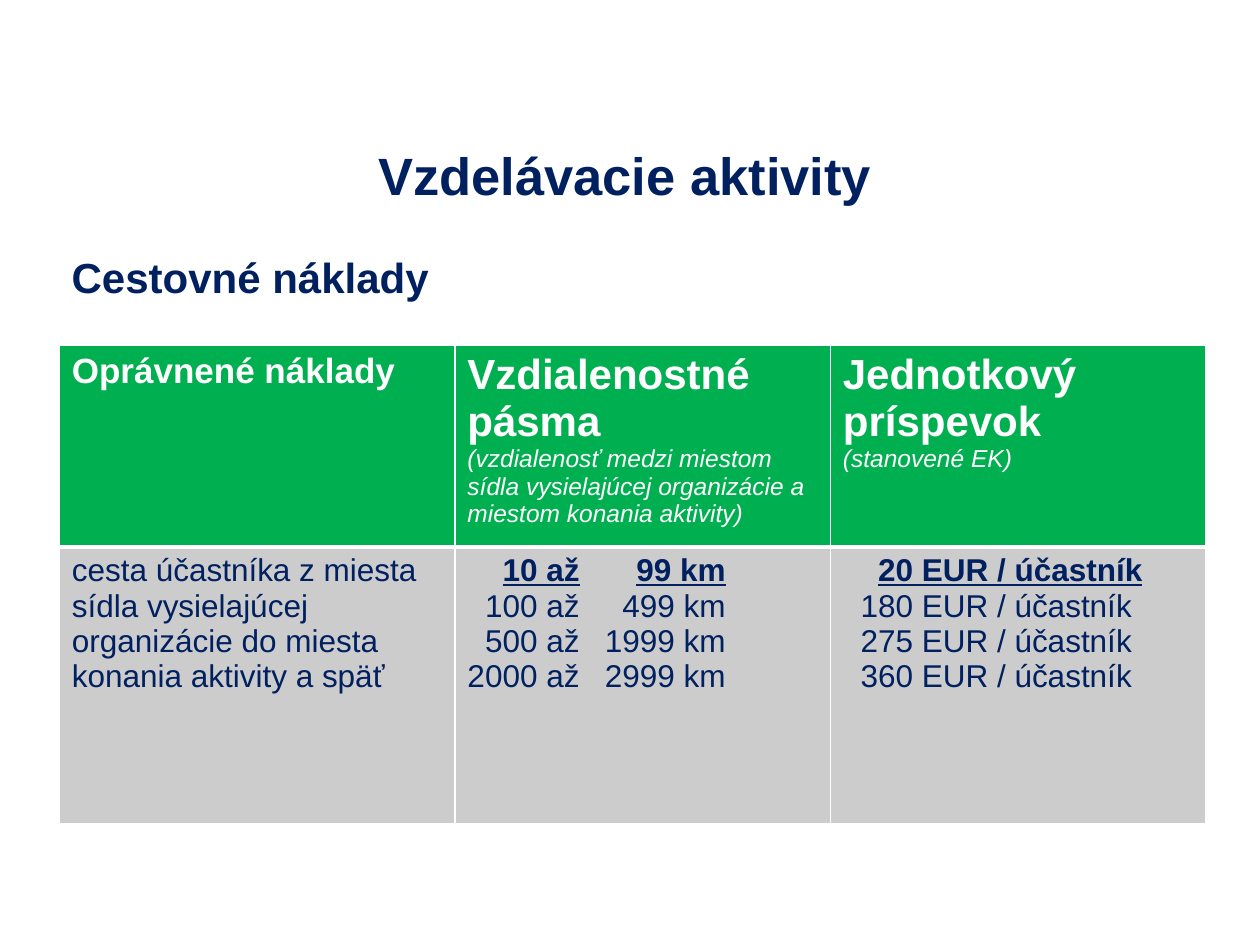
"""Builds the slide on travel costs for learning activities."""
from lxml.etree import SubElement
from pptx import Presentation
from pptx.dml.color import RGBColor
from pptx.enum.text import MSO_ANCHOR as Anchor, PP_ALIGN as Align
from pptx.oxml.ns import qn
from pptx.util import Inches, Pt

NAVY = RGBColor(0x00, 0x20, 0x60)
GREEN = RGBColor(0x00, 0xB0, 0x50)
GREY = RGBColor(0xCC, 0xCC, 0xCC)
WHITE = RGBColor(0xFF, 0xFF, 0xFF)
UNIT = Inches(0.1)
COLUMNS, ROWS = 100, 75
LEFT = 4.7
TAB_STOPS = (0.89, 2.05)

HEADING = {"size": Pt(24), "bold": True, "color": WHITE}
SMALL_HEADING = {**HEADING, "size": Pt(20)}
REMARK = {"size": Pt(14), "bold": False, "italic": True, "color": WHITE}
BODY = {"size": Pt(18), "bold": False, "color": NAVY}
MARKED = {**BODY, "bold": True, "underline": True}


def add_text(para, text, style):
    span = para.add_run()
    span.text = text
    span.font.name = "Arial"
    for name, value in style.items():
        if name == "color":
            span.font.color.rgb = value
        else:
            setattr(span.font, name, value)


def add_borders(cell, bottom):
    for side, width in (("L", 1), ("R", 1), ("T", 1), ("B", bottom)):
        line = SubElement(cell._tc.get_or_add_tcPr(), qn(f"a:ln{side}"), w=str(Pt(width)))
        SubElement(SubElement(line, qn("a:solidFill")), qn("a:srgbClr"), val=str(WHITE))


deck = Presentation()
deck.slide_width, deck.slide_height = COLUMNS * UNIT, ROWS * UNIT
page = deck.slides.add_slide(deck.slide_layouts[6])

titles = [
    ("Vzdelávacie aktivity", (7.1, 11.1, 85, 5.5), 30, Align.CENTER, Anchor.MIDDLE),
    ("Cestovné náklady", (LEFT, 19.5, 93.2, 5), 24, Align.JUSTIFY, Anchor.TOP),
]
for text, place, size, align, anchor in titles:
    box = page.shapes.add_textbox(*(int(length * UNIT) for length in place))
    frame = box.text_frame
    frame.word_wrap, frame.vertical_anchor = True, anchor
    frame.paragraphs[0].alignment = align
    add_text(frame.paragraphs[0], text, {"size": Pt(size), "bold": True, "color": NAVY})

distances = [("10", "99"), ("100", "499"), ("500", "1999"), ("2000", "2999")]
grants = [20, 180, 275, 360]
cells = [
    [
        [("Oprávnené náklady", SMALL_HEADING)],
        [("Vzdialenostné pásma", HEADING),
         ("(vzdialenosť medzi miestom sídla vysielajúcej organizácie a miestom konania aktivity)", REMARK)],
        [("Jednotkový príspevok", HEADING), ("(stanovené EK)", REMARK)],
    ],
    [
        [("cesta účastníka z miesta sídla vysielajúcej organizácie do miesta konania aktivity a späť", BODY)],
        [(f"\t{start} až\t{end} km", BODY if row else MARKED)
         for row, (start, end) in enumerate(distances)],
        [(f"{grant} EUR / účastník", BODY if row else MARKED)
         for row, grant in enumerate(grants)],
    ],
]
widths, heights = (31.4, 29.8, 29.8), (15.9, 22)
place = (LEFT, 27.4, sum(widths), sum(heights))
table = page.shapes.add_table(2, 3, *(int(length * UNIT) for length in place)).table
table.horz_banding = False
for column, width in zip(table.columns, widths):
    column.width = int(width * UNIT)
for row, height in zip(table.rows, heights):
    row.height = int(height * UNIT)

for row, (contents, fill, bottom) in enumerate(zip(cells, (GREEN, GREY), (3, 1))):
    for column, lines in enumerate(contents):
        cell = table.cell(row, column)
        add_borders(cell, bottom)
        cell.fill.solid()
        cell.fill.fore_color.rgb = fill
        for number, (text, style) in enumerate(lines):
            frame = cell.text_frame
            para = frame.paragraphs[0] if number == 0 else frame.add_paragraph()
            if row == 1 and column == 1:
                stops = SubElement(para._p.get_or_add_pPr(), qn("a:tabLst"))
                for stop in TAB_STOPS:
                    SubElement(stops, qn("a:tab"), pos=str(Inches(stop)), algn="r")
                add_text(para, "\t", BODY)
                text = text[1:]
            elif row == 1 and column == 2:
                indent = Inches(0.14 if number else 0.28)
                para._p.get_or_add_pPr().set("marL", str(indent))
            add_text(para, text, style)

deck.save("out.pptx")
